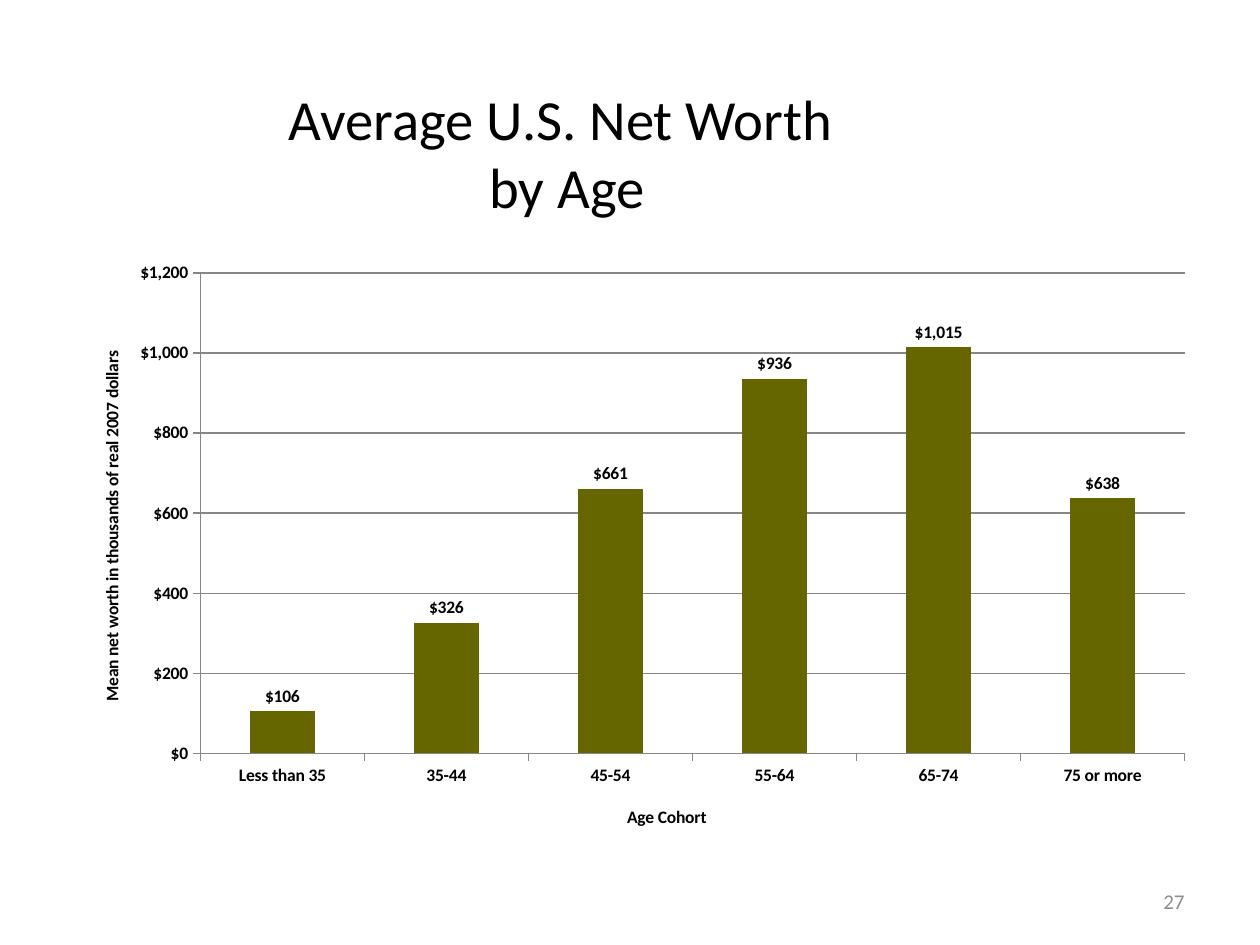
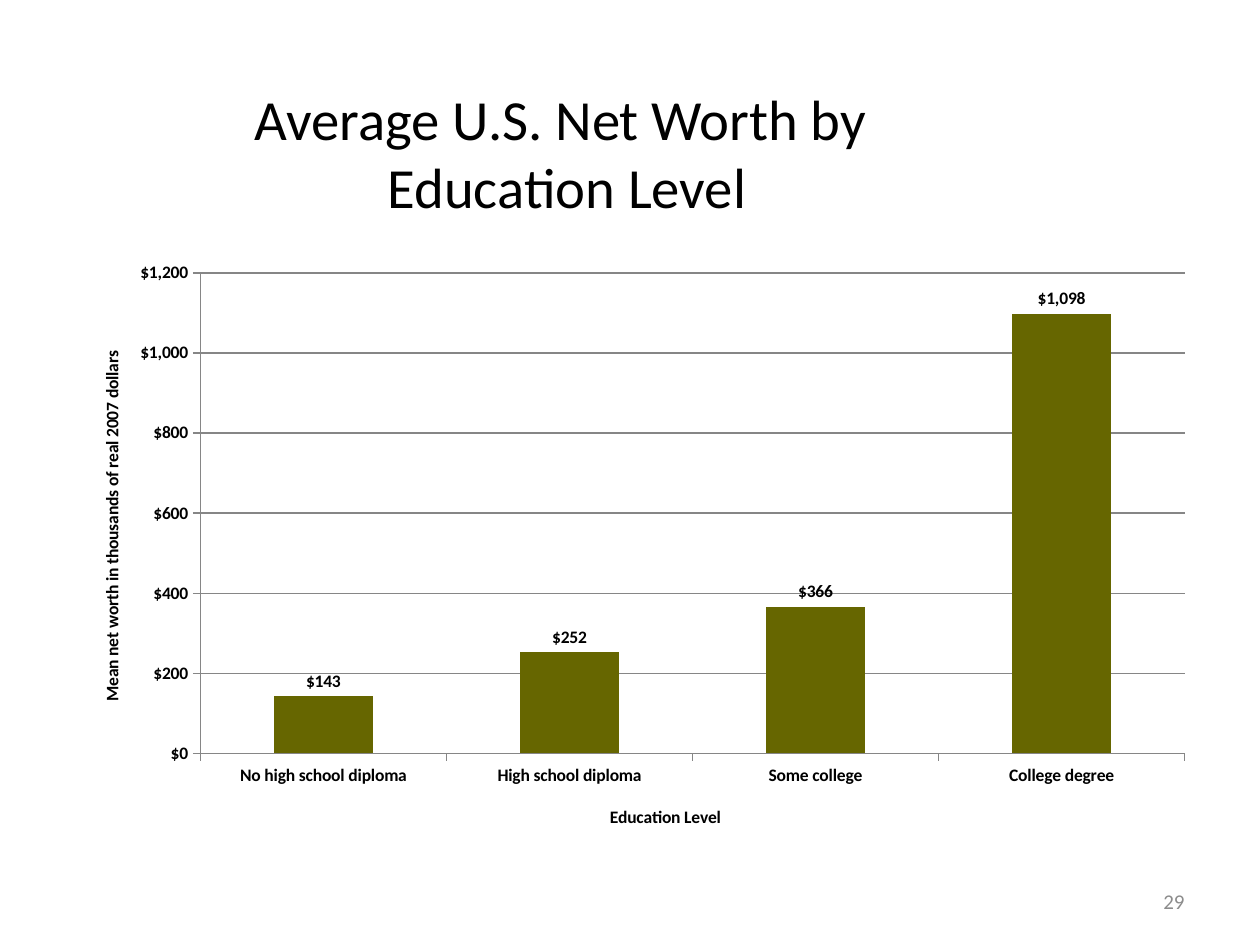
from lxml.etree import SubElement
from pptx import Presentation
from pptx.chart.data import CategoryChartData
from pptx.dml.color import RGBColor
from pptx.enum.chart import XL_CHART_TYPE as ChartType, XL_LABEL_POSITION as LabelPos, XL_TICK_MARK as Tick
from pptx.enum.text import MSO_ANCHOR as Anchor, PP_ALIGN as Align
from pptx.oxml.ns import qn
from pptx.util import Pt

SLIDES = [
    {
        "title": "Average U.S. Net Worth \vby Age",
        "axis": "Age Cohort",
        "axis_x": 0.49,
        "data": {"Less than 35": 106, "35-44": 326, "45-54": 661,
                 "55-64": 936, "65-74": 1015, "75 or more": 638},
        "number": "27",
    },
    {
        "title": "Average U.S. Net Worth by \vEducation Level",
        "axis": "Education Level",
        "axis_x": 0.475,
        "data": {"No high school diploma": 143, "High school diploma": 252,
                 "Some college": 366, "College degree": 1098},
        "number": "29",
    },
]
VALUE_TITLE = "Mean net worth in thousands of real 2007 dollars"
DOLLARS = '"$"#,##0'
FONT = "Calibri"
BLACK = RGBColor(0x00, 0x00, 0x00)
WHITE = RGBColor(0xFF, 0xFF, 0xFF)
GREY = RGBColor(0x8C, 0x8C, 0x8C)
LINE = RGBColor(0x86, 0x86, 0x86)
OLIVE = RGBColor(0x66, 0x66, 0x00)

TITLE_BOX = (0, 42, 648, 90)
CHART_BOX = (36, 144, 654, 342)
NUMBER_BOX = (516, 500.5, 168, 28.5)


def set_font(font, size, color, bold=False):
    font.name, font.size, font.bold = FONT, Pt(size), bold
    font.color.rgb = color


def add_text(s, box, text, size, color, align):
    tf = s.shapes.add_textbox(*map(Pt, box)).text_frame
    tf.word_wrap = True
    tf.vertical_anchor = Anchor.MIDDLE
    p = tf.paragraphs[0]
    p.text = text
    p.alignment = align
    set_font(p.font, size, color)


def set_layout(parent, index, **values):
    for old in parent.findall(qn("c:layout")):
        parent.remove(old)
    layout = SubElement(parent, qn("c:layout"))
    parent.insert(index, layout)
    manual = SubElement(layout, qn("c:manualLayout"))
    for key, value in values.items():
        SubElement(manual, qn(f"c:{key}")).set("val", str(value))


def style_axis(axis, title, x, y):
    axis.major_tick_mark = Tick.OUTSIDE
    axis.minor_tick_mark = Tick.NONE
    axis.format.line.color.rgb = LINE
    axis.format.line.width = Pt(0.75)
    set_font(axis.tick_labels.font, 10, BLACK, True)
    tf = axis.axis_title.text_frame
    tf.text = title
    set_font(tf.paragraphs[0].font, 10, BLACK, True)
    set_layout(axis.axis_title._element, 1, xMode="edge", yMode="edge", x=x, y=y)


def add_column_chart(s, content):
    data = CategoryChartData(number_format=DOLLARS)
    data.categories = list(content["data"])
    data.add_series("Series 1", list(content["data"].values()))
    chart = s.shapes.add_chart(ChartType.COLUMN_CLUSTERED, *map(Pt, CHART_BOX), data).chart
    set_font(chart.font, 10, BLACK)
    chart.has_legend = False
    chart.has_title = False

    plot = chart.plots[0]
    plot.gap_width = 150
    plot.vary_by_categories = False
    fill = plot.series[0].format.fill
    fill.solid()
    fill.fore_color.rgb = OLIVE
    plot.has_data_labels = True
    labels = plot.data_labels
    labels.show_value = True
    labels.number_format = DOLLARS
    labels.number_format_is_linked = False
    labels.position = LabelPos.OUTSIDE_END
    set_font(labels.font, 10, BLACK, True)

    style_axis(chart.category_axis, content["axis"], content["axis_x"], 0.92)
    values = chart.value_axis
    style_axis(values, VALUE_TITLE, 0.03, 0.16)
    values.minimum_scale, values.maximum_scale, values.major_unit = 0, 1200, 200
    values.tick_labels.number_format = DOLLARS
    values.tick_labels.number_format_is_linked = False
    values.has_major_gridlines = True
    values.major_gridlines.format.line.color.rgb = LINE
    values.major_gridlines.format.line.width = Pt(0.75)
    plot_area = chart._chartSpace.find(".//" + qn("c:plotArea"))
    set_layout(plot_area, 0, layoutTarget="inner", xMode="edge", yMode="edge",
               x=0.12, y=0.035, w=0.86, h=0.803)


def main():
    prs = Presentation()
    prs.slide_width, prs.slide_height = Pt(720), Pt(540)
    for content in SLIDES:
        s = prs.slides.add_slide(prs.slide_layouts[6])
        s.background.fill.solid()
        s.background.fill.fore_color.rgb = WHITE
        add_text(s, NUMBER_BOX, content["number"], 12, GREY, Align.RIGHT)
        add_text(s, TITLE_BOX, content["title"], 32.4, BLACK, Align.CENTER)
        add_column_chart(s, content)
    prs.save("out.pptx")


if __name__ == "__main__":
    main()
